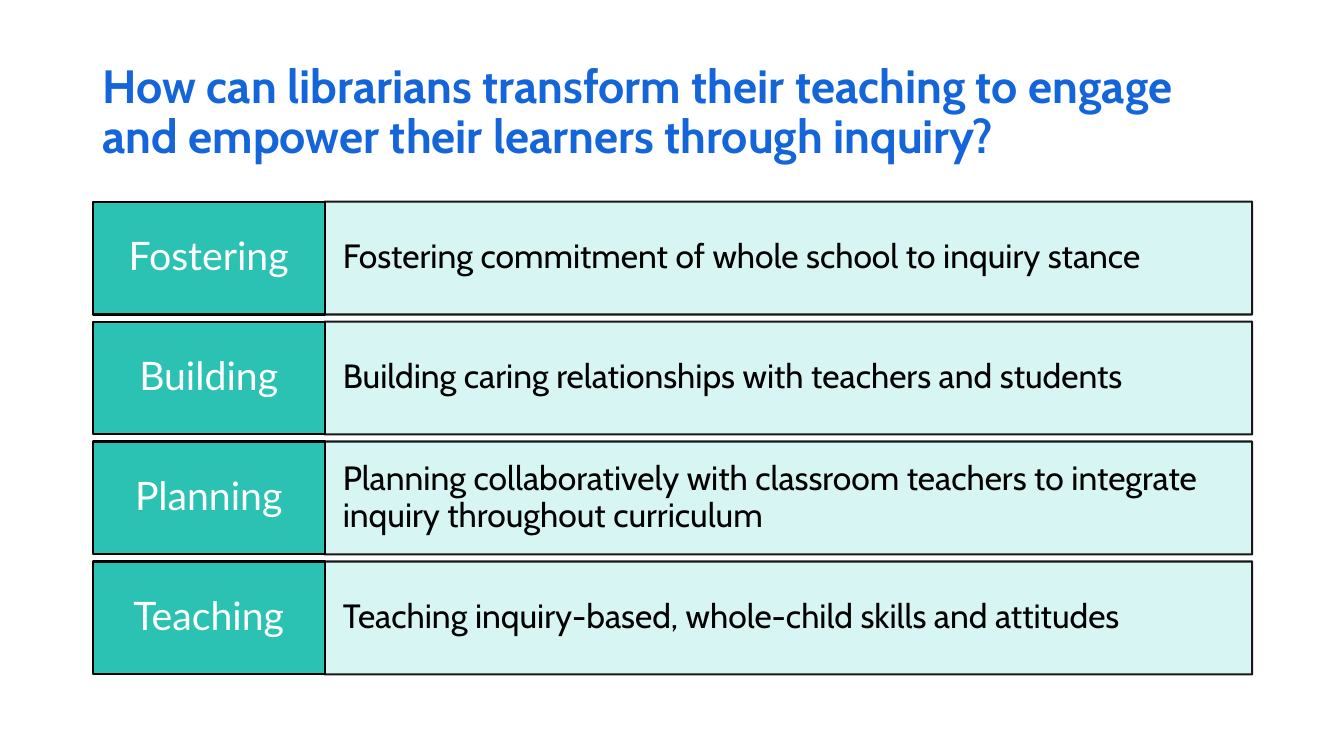
"""Build a slide listing four ways librarians can transform their teaching."""
import dataclasses

import lxml.etree
import pptx
import pptx.dml.color
import pptx.enum.shapes
import pptx.enum.text
import pptx.oxml.ns
import pptx.util

TITLE = "How can librarians transform their teaching to engage and empower their learners through inquiry?"
PRACTICES = [
    ("Fostering", "Fostering commitment of whole school to inquiry stance"),
    ("Building", "Building caring relationships with teachers and students"),
    ("Planning", "Planning collaboratively with classroom teachers to integrate inquiry throughout curriculum"),
    ("Teaching", "Teaching inquiry-based, whole-child skills and attitudes"),
]


@dataclasses.dataclass(frozen=True)
class Theme:
    title_color: str = "1465D9"
    label_fill: str = "2BC2B4"
    label_color: str = "FFFFFF"
    detail_fill: str = "D2F5F2"
    ink: str = "000000"
    body_font: str = "Cabin"
    label_font: str = "Lato"
    title_size: float = 33.3
    label_size: float = 28
    detail_size: float = 24
    line_width: float = 1.5
    detail_opacity: int = 90


THEME = Theme()
WIDTH, HEIGHT = 13.33, 7.5
LEFT, CONTENT_WIDTH = 0.92, 11.5
LABEL_WIDTH = CONTENT_WIDTH / 5
TITLE_TOP, TITLE_HEIGHT = 0.4, 1.45
ROWS_TOP, ROW_HEIGHT, ROW_PITCH = 2, 1.12, 1.19


def inches(*lengths):
    return [pptx.util.Inches(length) for length in lengths]


def rgb(color):
    return pptx.dml.color.RGBColor.from_string(color)


def write(shape, text, font, size, color, margins, centred=False, bold=False):
    frame = shape.text_frame
    frame.text = text
    frame.word_wrap = True
    frame.vertical_anchor = pptx.enum.text.MSO_ANCHOR.MIDDLE
    frame.margin_left = frame.margin_right = pptx.util.Inches(margins[0])
    frame.margin_top = frame.margin_bottom = pptx.util.Inches(margins[1])
    paragraph = frame.paragraphs[0]
    alignment = pptx.enum.text.PP_ALIGN
    paragraph.alignment = alignment.CENTER if centred else alignment.LEFT
    paragraph.line_spacing = 0.9
    run = paragraph.runs[0]
    run.font.name = font
    run.font.size = pptx.util.Pt(size)
    run.font.bold = bold
    run.font.color.rgb = rgb(color)


def add_box(slide, left, top, width, fill, opacity=100):
    shape = slide.shapes.add_shape(
        pptx.enum.shapes.MSO_SHAPE.RECTANGLE, *inches(left, top, width, ROW_HEIGHT)
    )
    shape.shadow.inherit = False
    shape.fill.solid()
    shape.fill.fore_color.rgb = rgb(fill)
    shape.line.color.rgb = rgb(THEME.ink)
    shape.line.width = pptx.util.Pt(THEME.line_width)
    if opacity < 100:
        qualified = pptx.oxml.ns.qn
        for color in shape.element.spPr.iter(qualified("a:srgbClr")):
            lxml.etree.SubElement(color, qualified("a:alpha"), val=str(opacity * 1000))
    return shape


def main():
    presentation = pptx.Presentation()
    presentation.slide_width, presentation.slide_height = inches(WIDTH, HEIGHT)
    slide = presentation.slides.add_slide(presentation.slide_layouts[6])

    title = slide.shapes.add_textbox(*inches(LEFT, TITLE_TOP, CONTENT_WIDTH, TITLE_HEIGHT))
    write(title, TITLE, THEME.body_font, THEME.title_size, THEME.title_color, (0.1, 0.05), bold=True)

    for row, (label, detail) in enumerate(PRACTICES):
        top = ROWS_TOP + row * ROW_PITCH
        detail_box = add_box(
            slide, LEFT + LABEL_WIDTH, top, CONTENT_WIDTH - LABEL_WIDTH,
            THEME.detail_fill, THEME.detail_opacity,
        )
        write(detail_box, detail, THEME.body_font, THEME.detail_size, THEME.ink, (0.18, 0.29))
        label_box = add_box(slide, LEFT, top, LABEL_WIDTH, THEME.label_fill)
        write(label_box, label, THEME.label_font, THEME.label_size, THEME.label_color,
              (0.12, 0.11), centred=True)

    presentation.save("out.pptx")


if __name__ == "__main__":
    main()
